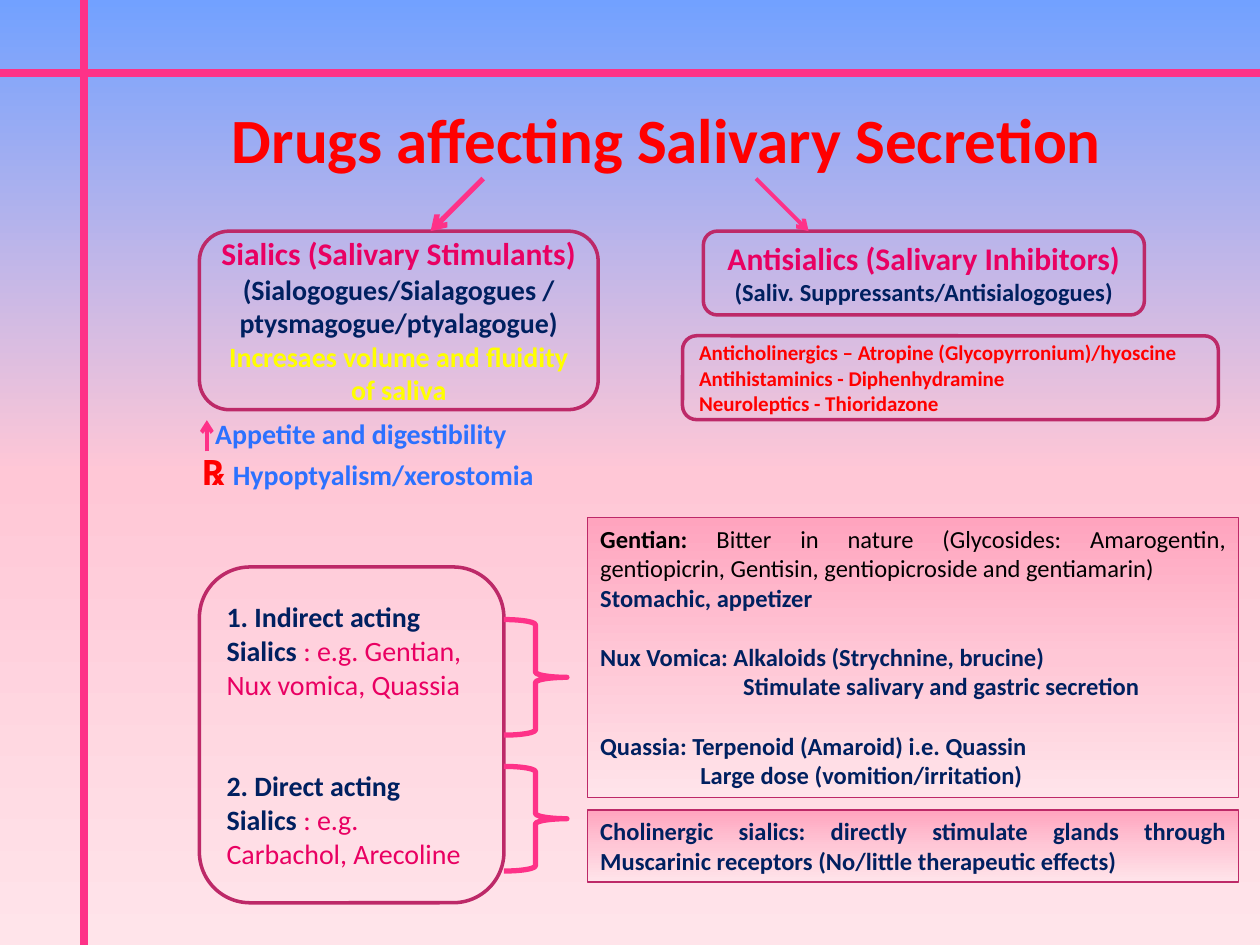
from copy import deepcopy
from dataclasses import dataclass

from pptx import Presentation
from pptx.dml.color import RGBColor
from pptx.enum.shapes import MSO_CONNECTOR, MSO_SHAPE
from pptx.enum.text import MSO_ANCHOR, MSO_AUTO_SIZE, PP_ALIGN
from pptx.oxml.ns import qn
from pptx.util import Cm, Pt

LEFT, CENTER, JUSTIFY = PP_ALIGN.LEFT, PP_ALIGN.CENTER, PP_ALIGN.JUSTIFY
TOP, MIDDLE = MSO_ANCHOR.TOP, MSO_ANCHOR.MIDDLE
RECTANGLE, ROUNDED = MSO_SHAPE.RECTANGLE, MSO_SHAPE.ROUNDED_RECTANGLE
BRACE = MSO_SHAPE.RIGHT_BRACE
STRAIGHT = MSO_CONNECTOR.STRAIGHT
NO_AUTOSIZE = MSO_AUTO_SIZE.NONE
TITLE_ONLY = 5


@dataclass(frozen=True)
class Theme:
    font: str = "Calibri"
    pink: str = "FE3288"
    border: str = "BD2968"
    magenta: str = "E90062"
    navy: str = "002060"
    blue: str = "2C71FF"
    red: str = "FF0000"
    yellow: str = "FFFF00"
    black: str = "000000"
    sky_gradient: tuple = ("72A1FF", "FFC7D6", "FFE4EA")
    panel_gradient: tuple = ("FFA4BE", "FFC7D6", "FFE4EA")
    title: int = 36
    symbol: int = 20
    heading: int = 18
    body: int = 16
    detail: int = 14
    small: int = 12


THEME = Theme()


def color(value):
    return RGBColor.from_string(value)


def set_values(target, values):
    for name, value in values.items():
        setattr(target, name, value)


def paint_gradient(fill, owner, colors):
    """Fill from top to bottom with evenly spaced colours; owner holds the XML."""
    fill.gradient()
    fill.gradient_angle = 270
    stop_list = next(owner.iter(qn("a:gsLst")))
    while len(stop_list) < len(colors):
        stop_list.append(deepcopy(stop_list[-1]))
    for index, (stop, value) in enumerate(zip(fill.gradient_stops, colors)):
        stop.color.rgb = color(value)
        stop.position = index / (len(colors) - 1)


def run(text, size, value, bold=True):
    return text, {"size": Pt(size), "bold": bold, "name": THEME.font}, value


def block(*runs, indent=0, **values):
    """One paragraph: its runs, left indent in cm and paragraph format values."""
    return runs, indent, values


def write(shape, blocks, alignment=LEFT, anchor=TOP):
    frame = shape.text_frame
    set_values(frame, {"word_wrap": True, "auto_size": NO_AUTOSIZE,
                       "vertical_anchor": anchor})
    for index, (runs, indent, values) in enumerate(blocks):
        paragraph = frame.add_paragraph() if index else frame.paragraphs[0]
        set_values(paragraph, {"alignment": alignment, **values})
        if indent:
            paragraph._p.get_or_add_pPr().set("marL", str(Cm(indent)))
        for text, font_values, value in runs:
            text_run = paragraph.add_run()
            text_run.text = text
            set_values(text_run.font, font_values)
            text_run.font.color.rgb = color(value)


def add_outline(slide, kind, box, line_color, width):
    shape = slide.shapes.add_shape(kind, *map(Cm, box))
    shape.shadow.inherit = False
    shape.fill.background()
    shape.line.color.rgb = color(line_color)
    shape.line.width = Pt(width)
    return shape


def add_rounded_box(slide, box, blocks, alignment=LEFT):
    shape = add_outline(slide, ROUNDED, box, THEME.border, 2)
    write(shape, blocks, alignment, MIDDLE)


def add_panel(slide, box, blocks):
    shape = add_outline(slide, RECTANGLE, box, THEME.border, 0.75)
    paint_gradient(shape.fill, shape._element, THEME.panel_gradient)
    write(shape, blocks, JUSTIFY)


def add_line(slide, ends, width, arrow=False):
    line = slide.shapes.add_connector(STRAIGHT, *map(Cm, ends))
    line.line.color.rgb = color(THEME.pink)
    line.line.width = Pt(width)
    properties = line._element.spPr
    if arrow:
        outline = properties.find(qn("a:ln"))
        outline.append(outline.makeelement(qn("a:tailEnd"), {"type": "arrow"}))
    properties.append(properties.makeelement(qn("a:effectLst"), {}))


def add_title(slide, text):
    title = slide.shapes.title
    set_values(title, {"left": Cm(2.75), "top": Cm(1.9),
                       "width": Cm(21.38), "height": Cm(1.8)})
    write(title, [block(run(text, THEME.title, THEME.red))], CENTER)


def add_drug_classes(slide):
    t = THEME
    add_rounded_box(slide, (4.02, 4.66, 8.04, 3.6), [
        block(run("Sialics (Salivary Stimulants)", t.heading, t.magenta)),
        block(run("(Sialogogues/Sialagogues / ptysmagogue/ptyalagogue)", t.body, t.navy)),
        block(run("Incresaes volume and fluidity of saliva", t.body, t.yellow)),
    ], CENTER)
    add_rounded_box(slide, (14.18, 4.66, 8.89, 1.69), [
        block(run("Antisialics (Salivary Inhibitors)", t.heading, t.magenta)),
        block(run("(Saliv. Suppressants/Antisialogogues)", t.detail, t.navy)),
    ], CENTER)
    inhibitors = ("Anticholinergics – Atropine (Glycopyrronium)/hyoscine",
                  "Antihistaminics - Diphenhydramine",
                  "Neuroleptics - Thioridazone")
    add_rounded_box(slide, (13.76, 6.77, 10.8, 1.69),
                    [block(run(text, t.small, t.red)) for text in inhibitors])


def add_uses(slide):
    t = THEME
    uses = slide.shapes.add_textbox(Cm(3.81), Cm(8.28), Cm(9.53), Cm(1.88))
    write(uses, [
        block(run("Appetite and digestibility", t.body, t.blue),
              indent=0.28, space_before=Pt(2)),
        block(run("℞ ", t.symbol, t.red),
              run("Hypoptyalism/xerostomia", t.body, t.blue)),
    ])


def add_sialic_types(slide):
    t = THEME
    add_rounded_box(slide, (4.02, 11.43, 6.14, 6.77), [
        block(run("1. Indirect acting Sialics", t.body, t.navy),
              run(" : e.g. Gentian, Nux vomica, Quassia", t.body, t.magenta, False)),
        block(run("2. Direct acting Sialics ", t.body, t.navy),
              run(": e.g. Carbachol, Arecoline", t.body, t.magenta, False),
              space_before=Pt(39)),
    ])
    for top, height in ((12.49, 2.33), (15.45, 2.11)):
        add_outline(slide, BRACE, (10.16, top, 1.27, height), t.pink, 3)


def add_details(slide):
    t = THEME

    def fact(text, **values):
        return block(run(text, t.detail, t.navy), **values)

    gap = Pt(17)
    add_panel(slide, (11.85, 10.44, 13.12, 5.64), [
        block(run("Gentian: ", t.detail, t.black),
              run("Bitter in nature (Glycosides: Amarogentin, gentiopicrin, "
                  "Gentisin, gentiopicroside and gentiamarin)",
                  t.detail, t.black, False)),
        fact("Stomachic, appetizer"),
        fact("Nux Vomica: Alkaloids (Strychnine, brucine)", space_before=gap),
        fact("Stimulate salivary and gastric secretion", indent=2.88),
        fact("Quassia: Terpenoid (Amaroid) i.e. Quassin", space_before=gap),
        fact("Large dose (vomition/irritation)", indent=2.02),
    ])
    add_panel(slide, (11.85, 16.33, 13.12, 1.45), [
        fact("Cholinergic sialics: directly stimulate glands through "
             "Muscarinic receptors (No/little therapeutic effects)"),
    ])


def main():
    presentation = Presentation()
    set_values(presentation, {"slide_width": Cm(25.4), "slide_height": Cm(19.05)})
    slide = presentation.slides.add_slide(presentation.slide_layouts[TITLE_ONLY])
    paint_gradient(slide.background.fill, slide._element, THEME.sky_gradient)
    for ends in ((1.69, 0, 1.69, 19.05), (0, 1.48, 25.4, 1.48)):
        add_line(slide, ends, 4.5)
    add_title(slide, "Drugs affecting Salivary Secretion")
    add_drug_classes(slide)
    add_uses(slide)
    add_sialic_types(slide)
    add_details(slide)
    for ends, width in (((9.74, 3.6, 8.68, 4.66), 3),
                        ((15.24, 3.6, 16.3, 4.66), 2.25),
                        ((4.17, 9.1, 4.17, 8.47), 2.25)):
        add_line(slide, ends, width, arrow=True)
    presentation.save("out.pptx")


if __name__ == "__main__":
    main()
